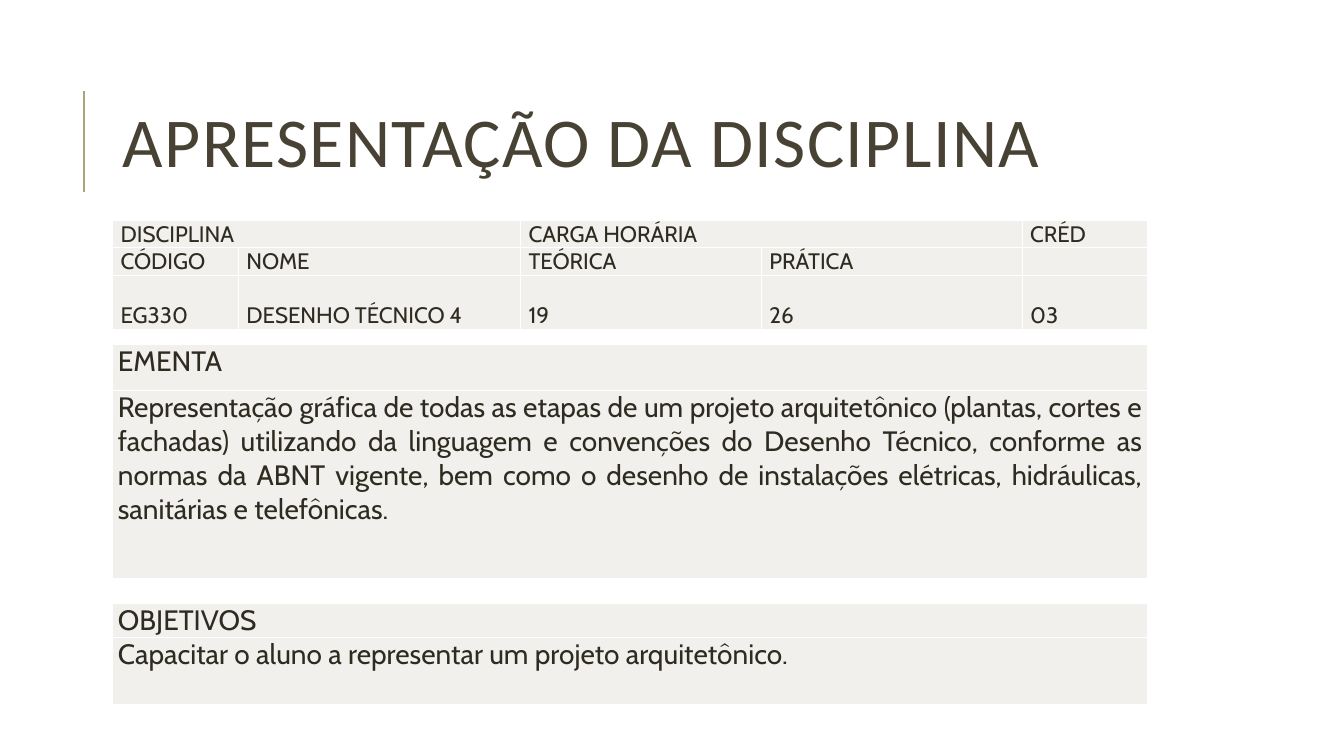
import pptx
import pptx.util
import pptx.dml.color
import pptx.enum.text
import pptx.enum.shapes
import pptx.oxml.ns
from lxml import etree

Cm, Pt = pptx.util.Cm, pptx.util.Pt
Align = pptx.enum.text.PP_ALIGN
LEFT, WIDE = 2.84, 26.09
INK, PALE, WHITE = "2E2B21", "F1F0EC", "FFFFFF"

TITLE = "APRESENTAÇÃO DA DISCIPLINA"
COURSE = [
    ["DISCIPLINA", "", "CARGA HORÁRIA", "", "CRÉD"],
    ["CÓDIGO", "NOME", "TEÓRICA", "PRÁTICA", ""],
    ["EG330", "DESENHO TÉCNICO 4", "19", "26", "03"],
]
SYLLABUS = [
    ["EMENTA"],
    ["Representação gráfica de todas as etapas de um projeto arquitetônico "
     "(plantas, cortes e fachadas) utilizando da linguagem e convenções do "
     "Desenho Técnico, conforme as normas da ABNT vigente, bem como o desenho "
     "de instalações elétricas, hidráulicas, sanitárias e telefônicas."],
]
GOALS = [
    ["OBJETIVOS"],
    ["Capacitar o aluno a representar um projeto arquitetônico."],
]
TABLES = [
    dict(rows=COURSE, top=5.56, cols=[3.17, 7.11, 6.07, 6.57, 3.17],
         highs=[0.68, 0.68, 1.37], size=16, pad=0.2, align=Align.LEFT,
         spans=[(0, 0, 1), (0, 2, 3)], tall=2),
    dict(rows=SYLLABUS, top=8.67, cols=[WIDE], highs=[1.17, 4.74],
         size=20, pad=0.13, align=Align.JUSTIFY, spans=[], tall=None),
    dict(rows=GOALS, top=15.2, cols=[WIDE], highs=[0.85, 1.7],
         size=20, pad=0.13, align=Align.JUSTIFY, spans=[], tall=None),
]


def paint(code):
    return pptx.dml.color.RGBColor.from_string(code)


def node(parent, tag, **attrs):
    return etree.SubElement(parent, pptx.oxml.ns.qn(tag), **attrs)


def write(para, text, size, face, color):
    run = para.add_run()
    run.text = text
    run.font.size, run.font.name = Pt(size), face
    run.font.color.rgb = paint(color)
    return run


def edge(cell):
    props = cell._tc.get_or_add_tcPr()
    for side in "LRTB":
        line = node(props, "a:ln" + side, w=str(Pt(1)))
        node(node(line, "a:solidFill"), "a:srgbClr", val=WHITE)


def style(cell, text, size, pad, align):
    edge(cell)
    cell.fill.solid()
    cell.fill.fore_color.rgb = paint(PALE)
    cell.margin_left = cell.margin_right = Cm(pad)
    cell.margin_top = cell.margin_bottom = 0
    para = cell.text_frame.paragraphs[0]
    para.alignment = align
    if text:
        write(para, text, size, "Cabin", INK)
    else:
        node(para._p, "a:endParaRPr", sz=str(size * 100))


def grid(slide, rows, top, cols, highs, size, pad, align, spans, tall):
    frame = slide.shapes.add_table(len(rows), len(cols), Cm(LEFT), Cm(top),
                                   Cm(WIDE), Cm(sum(highs)))
    table = frame.table
    table.first_row = table.horz_banding = False
    for col, width in zip(table.columns, cols):
        col.width = Cm(width)
    for row, high in zip(table.rows, highs):
        row.height = Cm(high)
    for r, texts in enumerate(rows):
        for c, text in enumerate(texts):
            cell = table.cell(r, c)
            style(cell, text, size, pad, align)
            if r == tall:
                cell.text_frame.paragraphs[0].line_spacing = 2.0
    for r, start, end in spans:
        table.cell(r, start).merge(table.cell(r, end))


def head(slide):
    rule = slide.shapes.add_connector(
        pptx.enum.shapes.MSO_CONNECTOR.STRAIGHT,
        Cm(2.12), Cm(4.83), Cm(2.12), Cm(2.29))
    rule.line.color.rgb = paint("A9A57C")
    rule.line.width = Pt(1.5)
    node(rule._element.spPr, "a:effectLst")
    title = slide.shapes.title
    title.left, title.top = Cm(LEFT), Cm(1.63)
    title.width, title.height = Cm(27), Cm(4.17)
    frame = title.text_frame
    frame.word_wrap = True
    frame.auto_size = pptx.enum.text.MSO_AUTO_SIZE.NONE
    frame.vertical_anchor = pptx.enum.text.MSO_ANCHOR.MIDDLE
    para = frame.paragraphs[0]
    para.alignment, para.line_spacing = Align.LEFT, 0.8
    run = write(para, TITLE, 50, "Calibri", "474233")
    run.font._element.set("spc", "100")


def main():
    deck = pptx.Presentation()
    deck.slide_width, deck.slide_height = Cm(33.87), Cm(19.05)
    slide = deck.slides.add_slide(deck.slide_layouts[5])
    head(slide)
    for item in TABLES:
        grid(slide, **item)
    deck.save("out.pptx")


if __name__ == "__main__":
    main()
